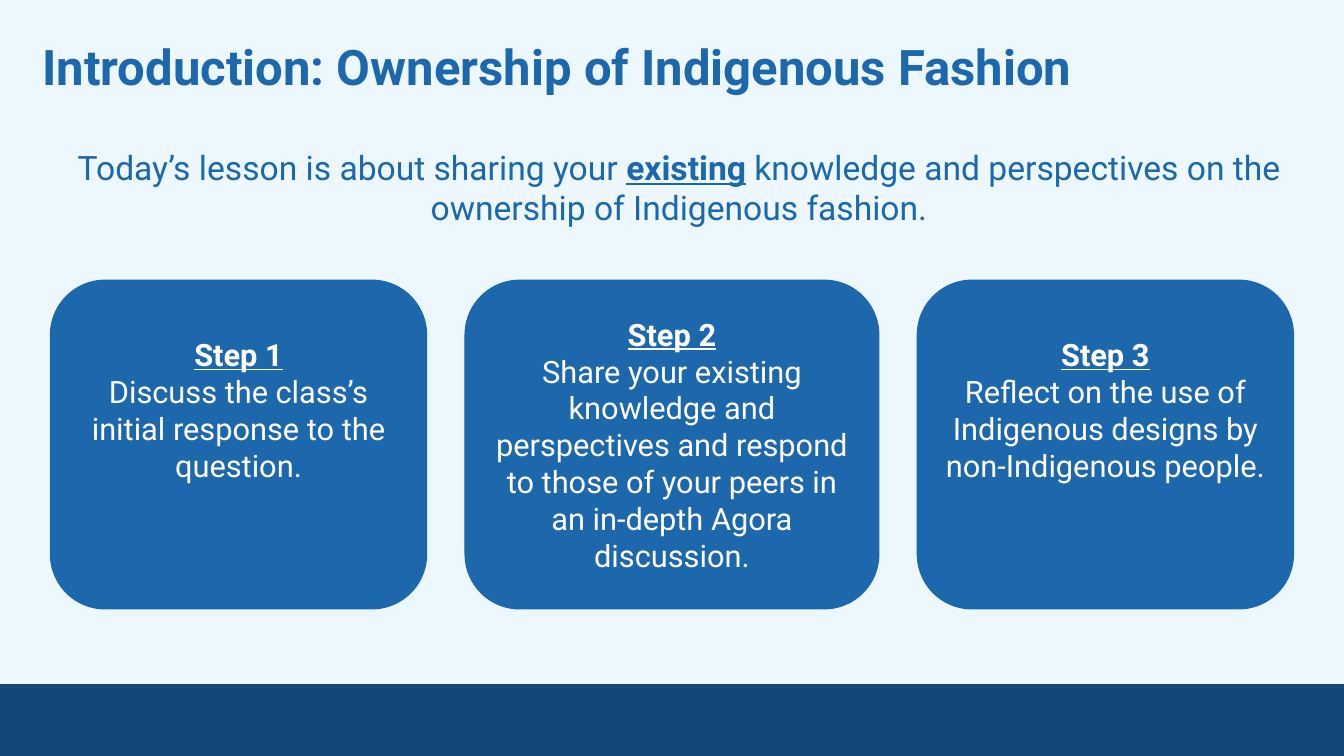
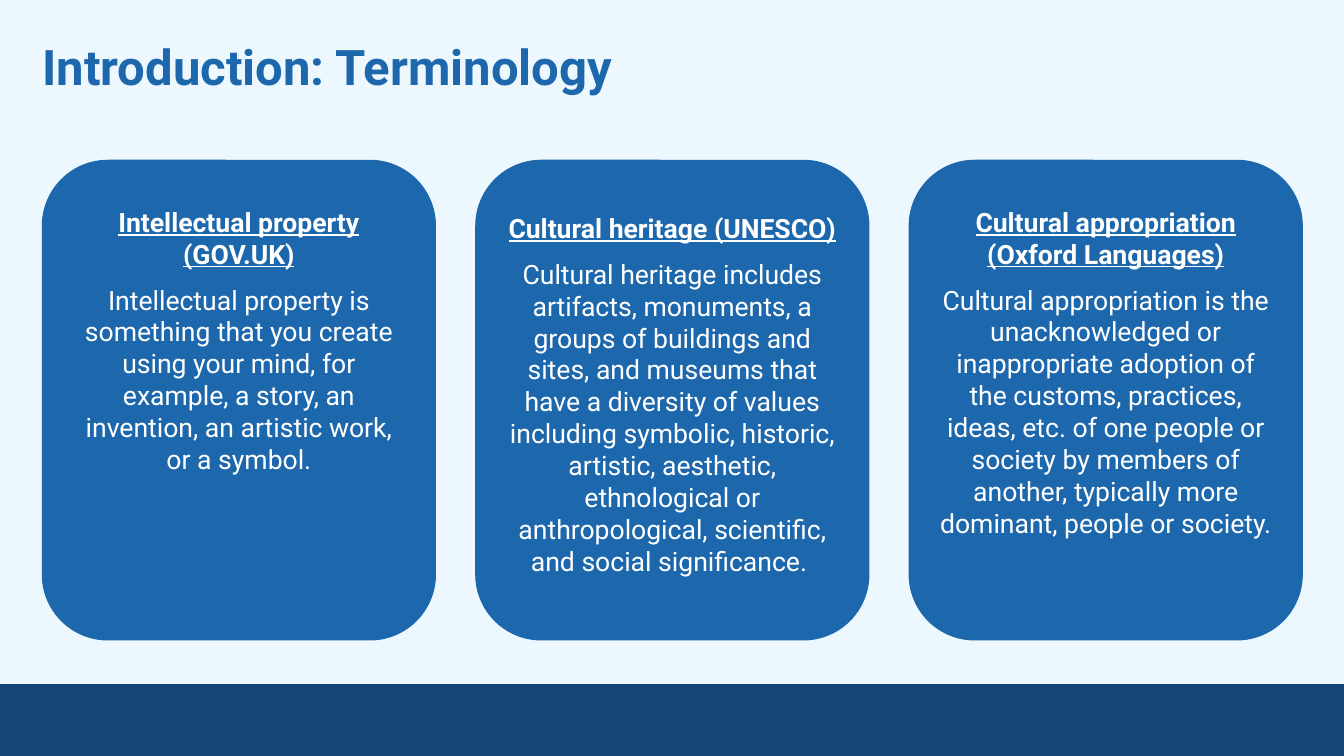
"""Build two lesson slides that introduce ownership of Indigenous fashion."""
from pptx import Presentation
from pptx import util as u
from pptx.dml.color import RGBColor
from pptx.enum import shapes, text

PALE, BLUE, NAVY, WHITE = "ECF8FE", "1D67AC", "144777", "FFFFFF"
FONT = "Roboto"
rgb = RGBColor.from_string

prs = Presentation()
prs.slide_width, prs.slide_height = u.Inches(13.33), u.Inches(7.5)
COL, ROW = prs.slide_width / 100, prs.slide_height / 100

LESSONS = [
    {
        "title": "Introduction: Ownership of Indigenous Fashion",
        "intro": ["Today’s lesson is about sharing your ", "existing",
                  " knowledge and perspectives on the ownership of Indigenous fashion."],
        "left": 3.75, "gap": 2.85, "top": 37.05, "height": 43.5,
        "widths": [28, 30.8, 28], "insets": [0.39, 0.19, 0.39],
        "size": 22, "before": 0,
        "cards": [
            ("Step 1", "Discuss the class’s initial response to the question."),
            ("Step 2", "Share your existing knowledge and perspectives and respond "
                       "to those of your peers in an in-depth Agora discussion."),
            ("Step 3", "Reflect on the use of Indigenous designs by non-Indigenous people."),
        ],
    },
    {
        "title": "Introduction: Terminology",
        "intro": [],
        "left": 3.15, "gap": 3, "top": 21.2, "height": 63.45,
        "widths": [29.25] * 3, "insets": [0.26, 0.32, 0.26],
        "size": 19, "before": 10,
        "cards": [
            ("Intellectual property (GOV.UK)",
             "Intellectual property is something that you create using your mind, "
             "for example, a story, an invention, an artistic work, or a symbol."),
            ("Cultural heritage (UNESCO)",
             "Cultural heritage includes artifacts, monuments, a groups of buildings "
             "and sites, and museums that have a diversity of values including symbolic, "
             "historic, artistic, aesthetic, ethnological or anthropological, scientific, "
             "and social significance. "),
            ("Cultural appropriation (Oxford Languages)",
             "Cultural appropriation is the unacknowledged or inappropriate adoption of "
             "the customs, practices, ideas, etc. of one people or society by members of "
             "another, typically more dominant, people or society."),
        ],
    },
]


def add_box(s, x, y, w, h, kind=None, fill=None, inset=0.1, top=None):
    """Add a text box, or a filled preset shape, placed in percent of the slide."""
    area = [u.Emu(round(n)) for n in (x * COL, y * ROW, w * COL, h * ROW)]
    if kind is None:
        sp = s.shapes.add_textbox(*area)
    else:
        sp = s.shapes.add_shape(kind, *area)
        sp.shadow.inherit = False
        sp.fill.solid()
        sp.fill.fore_color.rgb = sp.line.color.rgb = rgb(fill)
        sp.line.width = u.Pt(0.75)
    tf = sp.text_frame
    tf.word_wrap = True
    tf.vertical_anchor = text.MSO_ANCHOR.TOP
    tf.margin_left = tf.margin_right = tf.margin_bottom = u.Inches(inset)
    tf.margin_top = u.Inches(inset if top is None else top)
    return sp


def add_run(p, words, size, color, bold=False, underline=False):
    """Add formatted text to a paragraph."""
    r = p.add_run()
    r.text = words
    r.font.name, r.font.size = FONT, u.Pt(size)
    r.font.bold, r.font.underline = bold, underline
    r.font.color.rgb = rgb(color)


background = prs.slide_master.background.fill
background.solid()
background.fore_color.rgb = rgb(PALE)

for lesson in LESSONS:
    s = prs.slides.add_slide(prs.slide_layouts[6])
    add_box(s, 0, 90.5, 100, 9.5, shapes.MSO_SHAPE.RECTANGLE, NAVY)

    tf = add_box(s, 2.2, 3.15, 91.4, 11.5, inset=0.13).text_frame
    add_run(tf.paragraphs[0], lesson["title"], 35, BLUE, bold=True)

    if lesson["intro"]:
        p = add_box(s, 1.65, 18.1, 97.75, 13.5).text_frame.paragraphs[0]
        p.alignment = text.PP_ALIGN.CENTER
        for i, words in enumerate(lesson["intro"]):
            add_run(p, words, 24, BLUE, bold=i == 1, underline=i == 1)

    x = lesson["left"]
    for width, inset, card in zip(lesson["widths"], lesson["insets"], lesson["cards"]):
        sp = add_box(s, x, lesson["top"], width, lesson["height"],
                     shapes.MSO_SHAPE.ROUNDED_RECTANGLE, BLUE, top=inset)
        tf = sp.text_frame
        for i, words in enumerate(card):
            p = tf.add_paragraph() if i else tf.paragraphs[0]
            p.alignment = text.PP_ALIGN.CENTER
            if i and lesson["before"]:
                p.space_before = u.Pt(lesson["before"])
            add_run(p, words, lesson["size"], WHITE, bold=i == 0, underline=i == 0)
        x += width + lesson["gap"]

prs.save("out.pptx")
